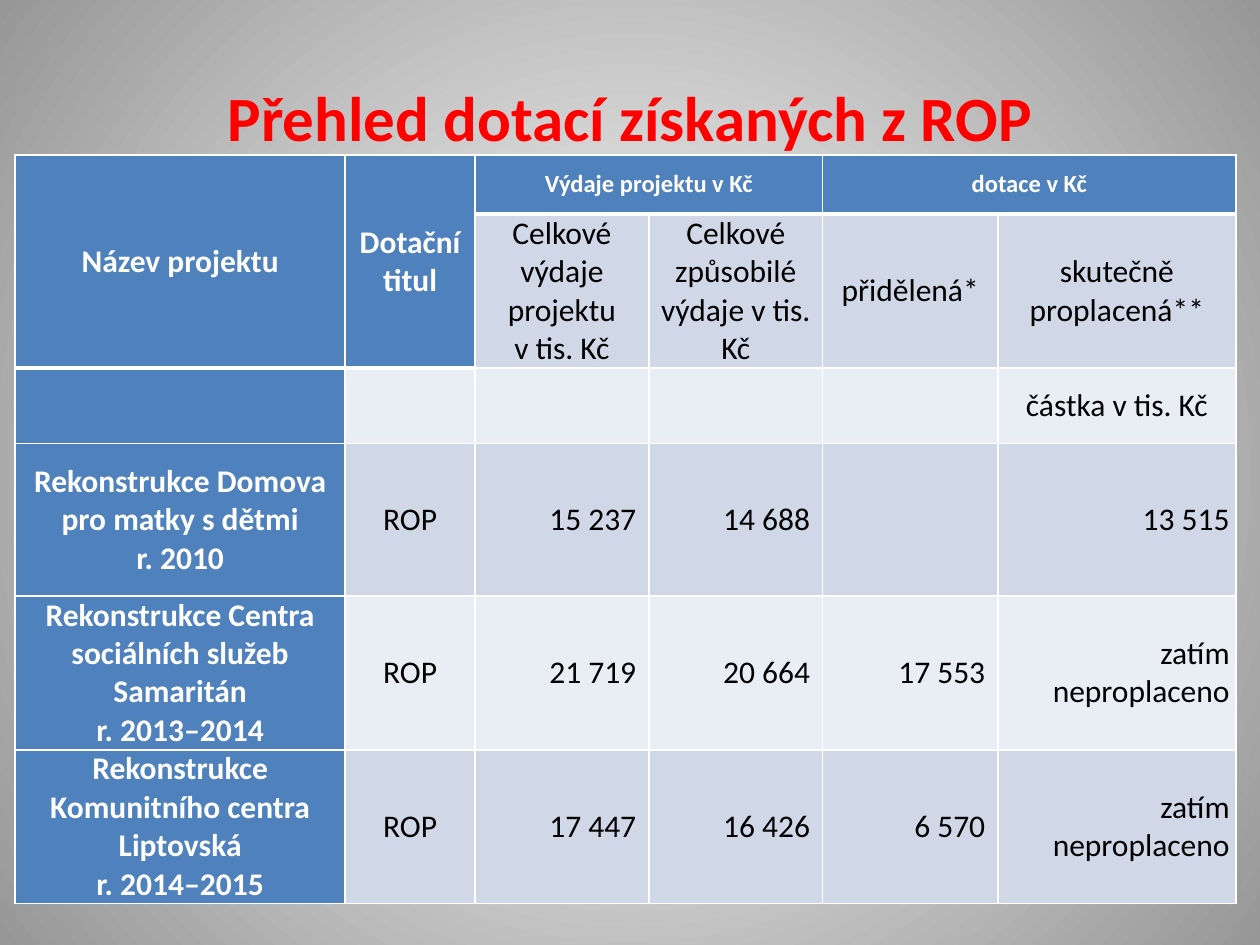
from lxml.etree import SubElement
from pptx import Presentation
from pptx.dml.color import RGBColor
from pptx.enum.text import MSO_ANCHOR, PP_ALIGN
from pptx.oxml.ns import qn
from pptx.util import Inches, Pt

RED = RGBColor(0xFF, 0x00, 0x00)
WHITE = RGBColor(0xFF, 0xFF, 0xFF)
BLACK = RGBColor(0x00, 0x00, 0x00)
GRAY = RGBColor(0x97, 0x97, 0x97)
BLUE = RGBColor(0x4F, 0x81, 0xBD)
DARK_BAND = RGBColor(0xD0, 0xD8, 0xE8)
LIGHT_BAND = RGBColor(0xE9, 0xED, 0xF4)

COLUMN_WIDTHS = [2.62, 1.03, 1.38, 1.38, 1.39, 1.89]
ROW_HEIGHTS = [0.47, 1.21, 0.6, 1.21, 1.21, 1.21]
ROWS = [
    ["Název projektu", "Dotační titul", "Výdaje projektu v Kč", "", "dotace v Kč", ""],
    ["", "", "Celkové výdaje projektu\vv tis. Kč", "Celkové způsobilé výdaje v tis. Kč",
     "přidělená*", "skutečně proplacená**"],
    ["", "", "", "", "", "částka v tis. Kč"],
    ["Rekonstrukce Domova pro matky s dětmi\nr. 2010", "ROP",
     "15 237", "14 688", "", "13 515"],
    ["Rekonstrukce Centra sociálních služeb Samaritán\nr. 2013‒2014", "ROP",
     "21 719", "20 664", "17 553", "zatím neproplaceno"],
    ["Rekonstrukce Komunitního centra Liptovská\nr. 2014‒2015", "ROP",
     "17 447", "16 426", "6 570", "zatím neproplaceno"],
]


def set_border(cell, side, width):
    line = SubElement(cell._tc.get_or_add_tcPr(), qn(f"a:ln{side}"), w=str(Pt(width)))
    SubElement(SubElement(line, qn("a:solidFill")), qn("a:srgbClr"), val=str(WHITE))


prs = Presentation()
prs.slide_width = Inches(10)
prs.slide_height = Inches(7.5)
slide = prs.slides.add_slide(prs.slide_layouts[5])

backdrop = slide.background.fill
backdrop.gradient()
for stop, color, position in zip(backdrop.gradient_stops, (WHITE, GRAY), (0, 1)):
    stop.color.rgb = color
    stop.position = position
gradient = slide.element.find(".//" + qn("a:gradFill"))
gradient.remove(gradient.find(qn("a:lin")))
circle = SubElement(gradient, qn("a:path"), path="circle")
SubElement(circle, qn("a:fillToRect"), l="50000", t="50000", r="50000", b="50000")

title = slide.shapes.title
title.left, title.top = Inches(0.5), Inches(0.3)
title.width, title.height = Inches(9), Inches(1.25)
title.text_frame.text = "Přehled dotací získaných z ROP"
title.text_frame.vertical_anchor = MSO_ANCHOR.MIDDLE
heading = title.text_frame.paragraphs[0]
heading.alignment = PP_ALIGN.CENTER
heading.font.name = "Calibri"
heading.font.size = Pt(36)
heading.font.bold = True
heading.font.color.rgb = RED

grants = slide.shapes.add_table(
    len(ROWS), len(COLUMN_WIDTHS), Inches(0.12), Inches(1.23),
    Inches(sum(COLUMN_WIDTHS)), Inches(sum(ROW_HEIGHTS))).table
for column, width in zip(grants.columns, COLUMN_WIDTHS):
    column.width = Inches(width)
for row, height in zip(grants.rows, ROW_HEIGHTS):
    row.height = Inches(height)

for r, texts in enumerate(ROWS):
    for c, text in enumerate(texts):
        cell = grants.cell(r, c)
        header_end = 1 if c < 2 else 0
        is_header = c == 0 or r <= header_end
        is_amount = r >= 3 and c >= 2

        set_border(cell, "L", 1)
        set_border(cell, "R", 1)
        set_border(cell, "T", 3 if r == header_end + 1 else 1)
        set_border(cell, "B", 3 if r == header_end else 1)
        cell.fill.solid()
        cell.fill.fore_color.rgb = BLUE if is_header else DARK_BAND if r % 2 else LIGHT_BAND

        cell.vertical_anchor = MSO_ANCHOR.MIDDLE
        cell.margin_left = Inches(0.05)
        cell.margin_right = Inches(0.1 if is_amount and c < 5 else 0.05)
        cell.margin_top = cell.margin_bottom = 0
        cell.text = text
        for paragraph in cell.text_frame.paragraphs:
            paragraph.alignment = PP_ALIGN.RIGHT if is_amount else PP_ALIGN.CENTER
            paragraph.font.name = "Calibri"
            paragraph.font.size = Pt(14 if r == 0 and c >= 2 else 18)
            paragraph.font.bold = is_header
            paragraph.font.color.rgb = WHITE if is_header else BLACK

for first, last in [((0, 0), (1, 0)), ((0, 1), (1, 1)), ((0, 2), (0, 3)), ((0, 4), (0, 5))]:
    grants.cell(*first).merge(grants.cell(*last))

prs.save("out.pptx")
